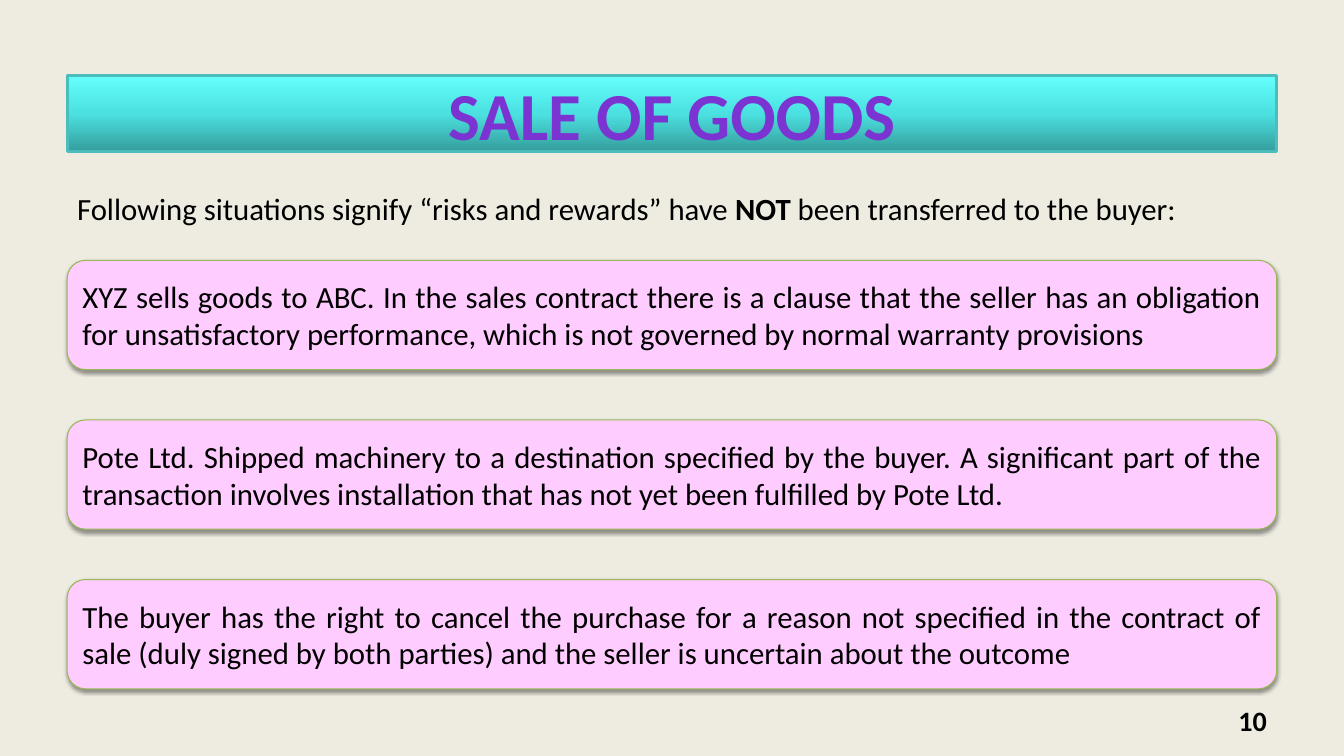
from copy import deepcopy
from dataclasses import dataclass

from lxml import etree
from pptx import Presentation
from pptx.dml.color import RGBColor
from pptx.enum import shapes, text
from pptx.oxml import ns
from pptx import util as u

BACKGROUND = RGBColor(0xEE, 0xEC, 0xE1)
BLACK = RGBColor(0x00, 0x00, 0x00)
PURPLE = RGBColor(0x7B, 0x34, 0xD2)
PINK = RGBColor(0xFF, 0xCC, 0xFF)
GREEN = RGBColor(0x98, 0xB9, 0x55)
TEAL = RGBColor(0x4B, 0xBD, 0xBC)
BANNER_STOPS = (
    (0.0, RGBColor(0x35, 0x9E, 0x9D)),
    (0.5, RGBColor(0x4B, 0xE1, 0xE0)),
    (1.0, RGBColor(0x65, 0xFF, 0xFE)),
)

WIDTH, HEIGHT = u.Inches(13.33), u.Inches(7.5)
COL, ROW = WIDTH / 20, HEIGHT / 90
FONT = "Calibri"
FIRST_CARD_ROW, CARD_PITCH = 31, 19


@dataclass(frozen=True)
class Box:
    col: float
    row: float
    cols: float
    rows: float

    def emu(self) -> tuple[int, int, int, int]:
        return (int(self.col * COL), int(self.row * ROW),
                int(self.cols * COL), int(self.rows * ROW))


BANNER = Box(1, 9, 18, 9)
INTRO = Box(1, 22, 18, 5.64)
PAGE_NUMBER = Box(14.33, 83.4, 4.67, 4.8)
INTRO_RUNS = (
    ("Following situations signify “risks and rewards” have ", False),
    ("NOT", True),
    (" been transferred to the buyer:", False),
)
SITUATIONS = (
    "XYZ sells goods to ABC. In the sales contract there is a clause that the "
    "seller has an obligation for unsatisfactory performance, which is not "
    "governed by normal warranty provisions",
    "Pote Ltd. Shipped machinery to a destination specified by the buyer. A "
    "significant part of the transaction involves installation that has not "
    "yet been fulfilled by Pote Ltd.",
    "The buyer has the right to cancel the purchase for a reason not specified "
    "in the contract of sale (duly signed by both parties) and the seller is "
    "uncertain about the outcome",
)


def write(sp, *runs: tuple[str, bool], size: float = 22, color: RGBColor = BLACK,
          align=text.PP_ALIGN.LEFT, anchor=text.MSO_ANCHOR.MIDDLE) -> None:
    tf = sp.text_frame
    tf.word_wrap = True
    tf.auto_size = text.MSO_AUTO_SIZE.NONE
    tf.vertical_anchor = anchor
    p = tf.paragraphs[0]
    p.alignment = align
    for words, bold in runs:
        r = p.add_run()
        r.text = words
        r.font.name = FONT
        r.font.size = u.Pt(size)
        r.font.bold = bold
        r.font.color.rgb = color


def outline(sp, color: RGBColor, width: float) -> None:
    sp.line.color.rgb = color
    sp.line.width = u.Pt(width)


def add_shadow(sp) -> None:
    sp.shadow.inherit = False
    effects = sp._element.spPr.find(ns.qn("a:effectLst"))
    shadow = etree.SubElement(effects, ns.qn("a:outerShdw"), blurRad="40000",
                              dist="20000", dir="5400000", rotWithShape="0")
    color = etree.SubElement(shadow, ns.qn("a:srgbClr"), val=str(BLACK))
    etree.SubElement(color, ns.qn("a:alpha"), val="38000")


def format_banner(sp) -> None:
    sp.left, sp.top, sp.width, sp.height = BANNER.emu()
    sp.fill.gradient()
    sp.fill.gradient_angle = 90
    stops = sp._element.spPr.find(".//" + ns.qn("a:gsLst"))
    stops.append(deepcopy(stops[0]))
    for stop, (position, color) in zip(sp.fill.gradient_stops, BANNER_STOPS):
        stop.position = position
        stop.color.rgb = color
    outline(sp, TEAL, 2)
    write(sp, ("SALE OF GOODS", True), size=48, color=PURPLE,
          align=text.PP_ALIGN.CENTER)


def add_card(slide, box: Box, words: str) -> None:
    sp = slide.shapes.add_shape(shapes.MSO_SHAPE.ROUNDED_RECTANGLE, *box.emu())
    sp.fill.solid()
    sp.fill.fore_color.rgb = PINK
    outline(sp, GREEN, 0.75)
    add_shadow(sp)
    write(sp, (words, False), align=text.PP_ALIGN.JUSTIFY)


def main() -> None:
    prs = Presentation()
    prs.slide_width, prs.slide_height = WIDTH, HEIGHT
    slide = prs.slides.add_slide(prs.slide_layouts.get_by_name("Title Only"))
    slide.background.fill.solid()
    slide.background.fill.fore_color.rgb = BACKGROUND

    format_banner(slide.shapes.title)
    write(slide.shapes.add_textbox(*INTRO.emu()), *INTRO_RUNS,
          anchor=text.MSO_ANCHOR.TOP)
    for i, words in enumerate(SITUATIONS):
        add_card(slide, Box(1, FIRST_CARD_ROW + i * CARD_PITCH, 18, 13), words)
    write(slide.shapes.add_textbox(*PAGE_NUMBER.emu()), ("10", True), size=20,
          align=text.PP_ALIGN.RIGHT)
    prs.save("out.pptx")


if __name__ == "__main__":
    main()
